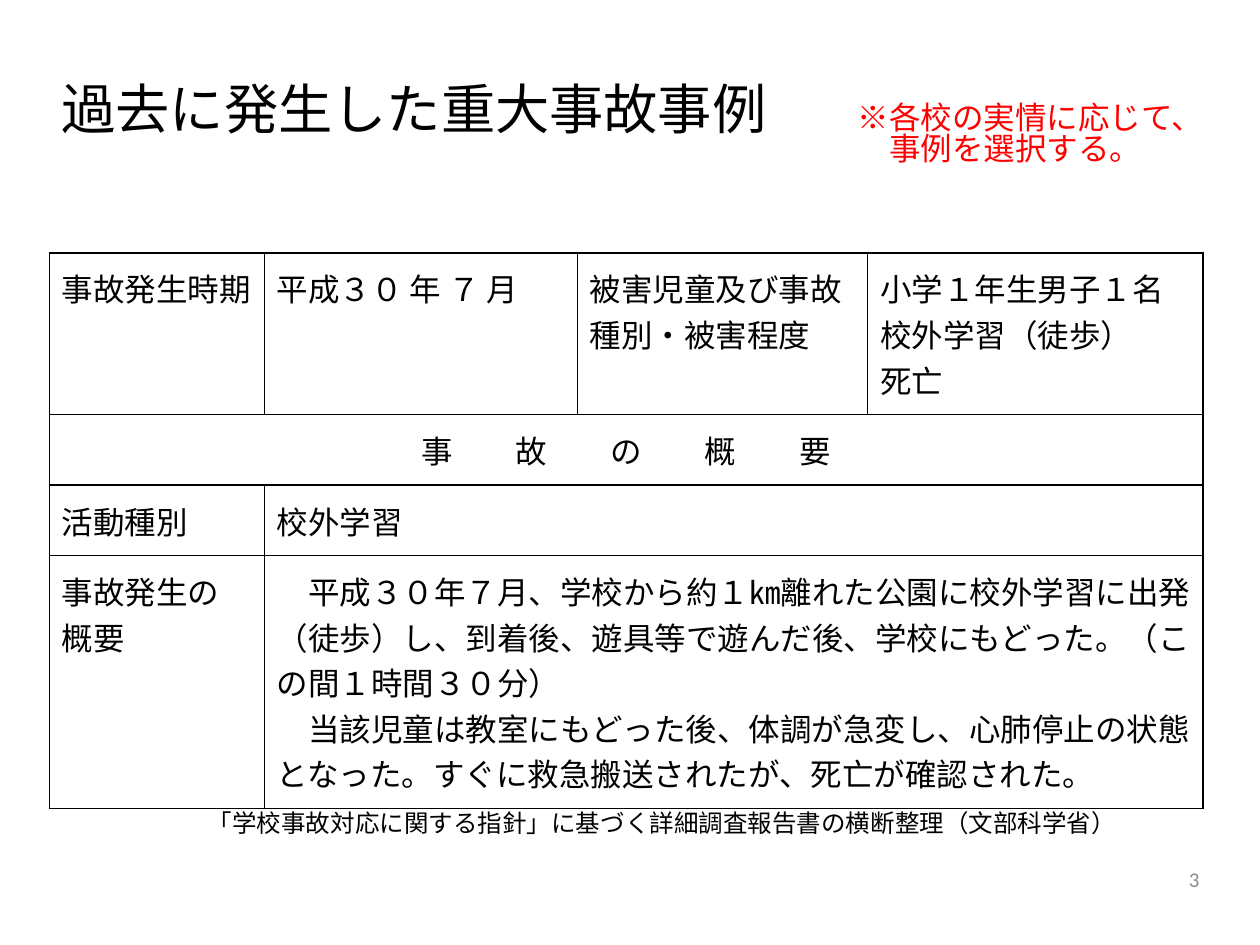
from pptx import Presentation
from pptx.dml.color import RGBColor
from pptx.enum.text import MSO_ANCHOR, MSO_AUTO_SIZE, PP_ALIGN
from pptx.oxml import parse_xml
from pptx.oxml.ns import nsdecls, qn
from pptx.util import Cm, Pt

TOP, MID = MSO_ANCHOR.TOP, MSO_ANCHOR.MIDDLE
LEFT, CENTER, RIGHT = PP_ALIGN.LEFT, PP_ALIGN.CENTER, PP_ALIGN.RIGHT
NONE = MSO_AUTO_SIZE.NONE

INK = {"text": "000000", "note": "FF0000", "page": "8C8C8C", "line": "000000"}
SANS, LATIN = "Noto Sans CJK JP", "Calibri"

TITLE = {
    "lines": ["過去に発生した重大事故事例"],
    "box": (0.99, 1.42, 16.05, 1.8), "pad": 0.25, "anchor": MID,
    "style": {"size": 31, "space": 0.76},
}
NOTES = [
    {
        "lines": ["「学校事故対応に関する指針」に基づく詳細調査報告書の横断整理（文部科学省）"],
        "box": (3.94, 16.26, 18.87, 0.86), "pad": 0.13, "anchor": TOP,
        "style": {"size": 14, "space": 0.84},
    },
    {
        "lines": ["※各校の実情に応じて、", "　事例を選択する。"],
        "box": (17.04, 1.96, 7.54, 1.8), "pad": 0.13, "anchor": TOP,
        "style": {"ink": "note", "space": 0.84},
    },
    {
        "lines": ["3"],
        "box": (19.15, 17.09, 5.28, 1.27), "pad": 0.25, "anchor": MID,
        "style": {"size": 12, "face": LATIN, "ink": "page", "align": RIGHT},
    },
]
SPOT = (0.99, 5.1)
COLS = [4.34, 6.31, 5.85, 6.76]
ROWS = [
    (2.69, [
        ["事故発生時期"],
        ["平成３０ 年 ７ 月"],
        ["被害児童及び事故種別・被害程度"],
        ["小学１年生男子１名", "校外学習（徒歩）", "死亡"],
    ]),
    (1.22, [["事　　故　　の　　概　　要"]]),
    (1.22, [["活動種別"], ["校外学習"]]),
    (4.45, [
        ["事故発生の", "概要"],
        [
            "　平成３０年７月、学校から約１㎞離れた公園に校外学習に出発（徒歩）し、"
            "到着後、遊具等で遊んだ後、学校にもどった。（この間１時間３０分）",
            "　当該児童は教室にもどった後、体調が急変し、心肺停止の状態となった。"
            "すぐに救急搬送されたが、死亡が確認された。",
        ],
    ]),
]


def write(frame, lines, size=18, face=SANS, ink="text", align=LEFT, space=1.0):
    for num, line in enumerate(lines):
        para = frame.add_paragraph() if num else frame.paragraphs[0]
        form = {"alignment": align, "line_spacing": space,
                "space_before": Pt(0), "space_after": Pt(0)}
        for key, val in form.items():
            setattr(para, key, val)
        run = para.add_run()
        run.text = line
        for key, val in {"size": Pt(size), "name": face, "bold": False}.items():
            setattr(run.font, key, val)
        run.font.color.rgb = RGBColor.from_string(INK[ink])
        east = parse_xml(f'<a:ea {nsdecls("a")} typeface="{face}"/>')
        run.font._element.find(qn("a:latin")).addnext(east)


def place(shape, item):
    for key, val in zip(("left", "top", "width", "height"), item["box"]):
        setattr(shape, key, Cm(val))
    form = {"word_wrap": True, "auto_size": NONE, "vertical_anchor": item["anchor"],
            "margin_left": Cm(0.25), "margin_right": Cm(0.25),
            "margin_top": Cm(item["pad"]), "margin_bottom": Cm(item["pad"])}
    for key, val in form.items():
        setattr(shape.text_frame, key, val)
    write(shape.text_frame, item["lines"], **item["style"])


def frame_cell(cell):
    cell.fill.background()
    for side in ("left", "right", "top", "bottom"):
        setattr(cell, "margin_" + side, Cm(0.25))
    for num, side in enumerate("LRTB"):
        edge = parse_xml(
            f'<a:ln{side} {nsdecls("a")} w="{Pt(0.75)}"><a:solidFill>'
            f'<a:srgbClr val="{INK["line"]}"/></a:solidFill></a:ln{side}>')
        cell._tc.get_or_add_tcPr().insert(num, edge)


def add_grid(slide):
    size = sum(COLS), sum(high for high, _ in ROWS)
    grid = slide.shapes.add_table(
        len(ROWS), len(COLS), *(Cm(val) for val in SPOT + size)).table
    grid.first_row = grid.horz_banding = False
    for col, wide in zip(grid.columns, COLS):
        col.width = Cm(wide)
    for row, (high, texts) in enumerate(ROWS):
        grid.rows[row].height = Cm(high)
        for col in range(len(COLS)):
            frame_cell(grid.cell(row, col))
        last = len(texts) - 1
        if last < len(COLS) - 1:
            grid.cell(row, last).merge(grid.cell(row, len(COLS) - 1))
        for col, lines in enumerate(texts):
            write(grid.cell(row, col).text_frame, lines,
                  align=LEFT if last else CENTER)


def main():
    deck = Presentation()
    deck.slide_width, deck.slide_height = Cm(25.4), Cm(19.05)
    slide = deck.slides.add_slide(deck.slide_layouts[5])
    place(slide.shapes.title, TITLE)
    add_grid(slide)
    for item in NOTES:
        box = slide.shapes.add_textbox(*(Cm(val) for val in item["box"]))
        place(box, item)
    deck.save("out.pptx")


if __name__ == "__main__":
    main()
